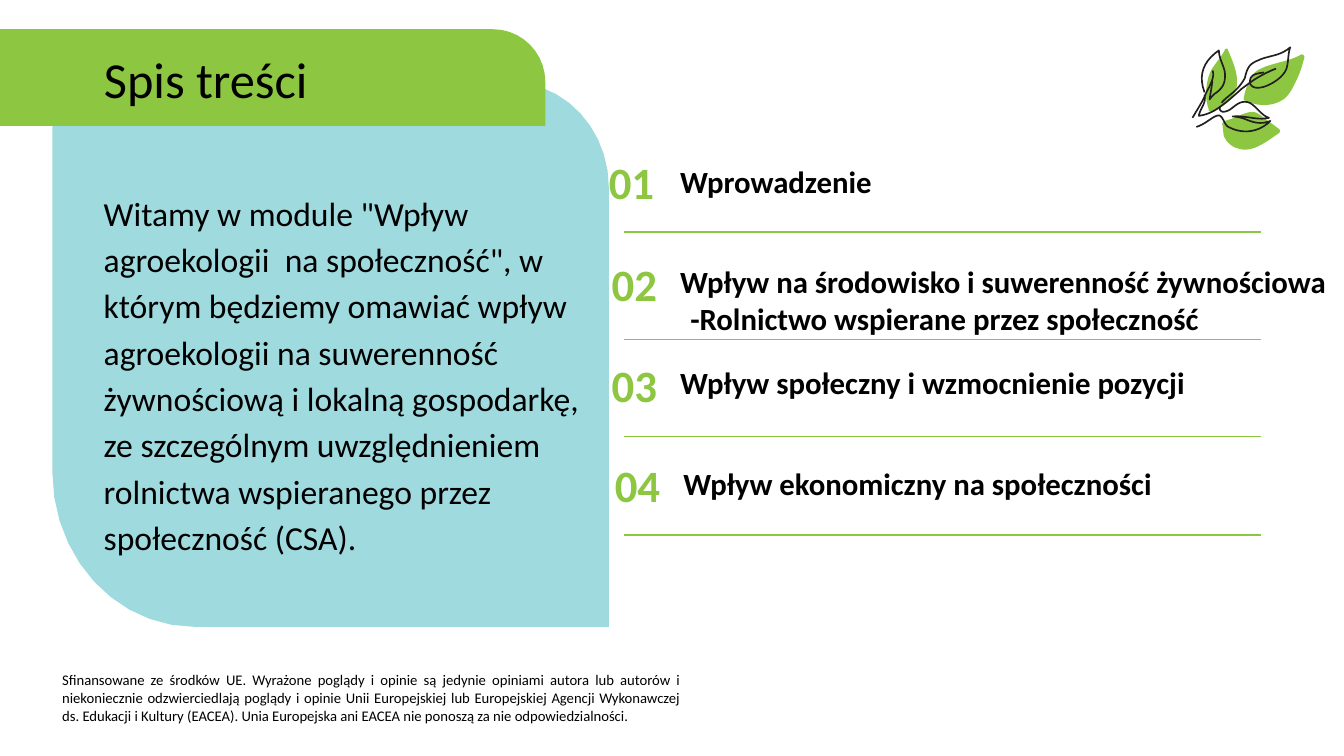
from lxml import etree
from pptx import Presentation
from pptx import util as u
from pptx.dml.color import RGBColor
from pptx.enum import shapes, text
from pptx.oxml.ns import qn

GREEN = RGBColor(0x8D, 0xC6, 0x41)
AQUA = RGBColor(0x9F, 0xDA, 0xDF)
INK = RGBColor(0x23, 0x1F, 0x20)
BLACK = RGBColor(0, 0, 0)
CURVE_STEPS = 10

PANEL = [(434.9, 447.8), (139, 447.8), (82.8, 447.8, 37.4, 398.2, 37.4, 337),
         (37.4, 59), (365.8, 59), (403.9, 59, 434.9, 92.9, 434.9, 133.9)]
BANNER = [(0, 20.9), (352.1, 20.9), (373, 20.9, 389.5, 38.2, 389.5, 58.3),
          (389.5, 90), (0, 90)]
LEAVES = [
    [(867.6, 79.2), (874.8, 75.6, 882, 69.8, 883.4, 61.9),
     (884.9, 53.3, 880.6, 43.9, 877, 35.3), (877, 34.5, 875, 34.5, 874.8, 36),
     (872.6, 40.3, 869.8, 43.2, 866.9, 47.5), (864.7, 50.4, 863.3, 54, 862.6, 57.6),
     (861.1, 64, 861.1, 71.3, 863.3, 77.8), (863, 80, 866, 80, 867.6, 79.2)],
    [(917.3, 70.6), (921.6, 67, 923.8, 61.9, 925.9, 57.6),
     (928.8, 51.8, 930.2, 46.8, 931.7, 41), (931.7, 39.6, 931, 38.9, 929.5, 38.9),
     (924.5, 41.8, 919.4, 43.2, 913.7, 44.6), (909.4, 46, 905, 46.8, 900.7, 49),
     (897.1, 50.4, 894.2, 53.3, 892.8, 56.9), (890.6, 61.2, 889.2, 65.5, 888.5, 69.8),
     (888, 71.5, 889, 72, 889.9, 72), (898.6, 76.3, 909.4, 76.3, 917.3, 70.6)],
    [(913.7, 95), (914.4, 94.3, 914.4, 92.9, 913.7, 92.2),
     (910, 89.3, 906.5, 87, 902.9, 84.2), (900, 82, 897.8, 79.9, 894.2, 79.9),
     (888, 80.5, 882, 84.5, 877, 85.7), (873, 87, 872.5, 88, 873.4, 90),
     (873.4, 92.2, 874, 95, 874, 96.5), (875.5, 100.8, 879.1, 104.4, 883.4, 105.8),
     (894.2, 110.2, 905, 100.8, 913.7, 95)],
]
STROKES = [
    [(851.8, 84.2), (856, 77, 860, 71, 861.5, 66.5),
     (865.5, 59, 867.5, 55, 866.2, 50.4)],
    [(860.4, 66), (855.5, 53, 860, 43.5, 870.6, 36), (871, 44, 875.5, 48, 875, 54.7),
     (875, 61, 871.5, 64.5, 867.6, 67), (866, 68.5, 864.8, 70, 864, 71),
     (864.8, 66, 865.5, 62, 866, 58)],
    [(860.4, 67.7), (861.5, 72, 859.5, 75, 858, 78),
     (857.5, 79.5, 856.5, 81, 856.4, 82.8), (865, 81.5, 870, 77.5, 874, 74.5),
     (878, 71.5, 883, 67, 887, 63.4), (893, 59, 899, 54, 911.5, 49)],
    [(872.6, 73.4), (877, 68, 884, 65.5, 889.2, 55.8),
     (891, 47.5, 893, 45.5, 898.6, 43.2), (906, 39.5, 914, 40.5, 921.6, 33.8),
     (919.8, 39, 920.5, 45, 918.7, 49.7), (916, 56, 906, 62, 900, 62.6),
     (896.5, 63.2, 894, 62, 893, 59.8), (892, 54, 896, 52.5, 903, 51.8)],
    [(854.6, 90.7), (862, 88.5, 867, 82, 871, 82.5),
     (874, 83.5, 874.5, 89.5, 877.7, 90.8), (888.5, 96.5, 900, 94, 907.5, 86.4),
     (901, 89, 896, 87.8, 890, 85.3), (886, 83.8, 884, 83.5, 880.5, 83.2),
     (890, 82.3, 898, 86.3, 906.5, 84.2), (900, 82.5, 896, 72.5, 889.2, 72.7),
     (882, 73, 880, 80, 873.4, 79.9), (871, 79, 871.2, 78, 871.5, 76)],
]

WELCOME = ('Witamy w module "Wpływ agroekologii  na społeczność", w którym będziemy '
           "omawiać wpływ agroekologii na suwerenność żywnościową i lokalną gospodarkę, "
           "ze szczególnym uwzględnieniem rolnictwa wspieranego przez społeczność (CSA).")
FUNDING = ("Sfinansowane ze środków UE. Wyrażone poglądy i opinie są jedynie opiniami "
           "autora lub autorów i niekoniecznie odzwierciedlają poglądy i opinie Unii "
           "Europejskiej lub Europejskiej Agencji Wykonawczej ds. Edukacji i Kultury "
           "(EACEA). Unia Europejska ani EACEA nie ponoszą za nie odpowiedzialności.")
CHAPTERS = [
    ("01", (423.4, 105.1), ["Wprowadzenie"], (478.8, 104.4), 165.6),
    ("02", (425.5, 177.8), ["Wpływ na środowisko i suwerenność żywnościowa",
                            "-Rolnictwo wspierane przez społeczność"], (478.8, 187), 242.6),
    ("03", (425.5, 249.8), ["Wpływ społeczny i wzmocnienie pozycji"], (478.8, 247.7), 311.8),
    ("04", (427.7, 321.8), ["Wpływ ekonomiczny na społeczności"], (481, 319.7), 382.3),
]


class Page:
    font = "Calibri"

    def __init__(self, deck):
        self.slide = deck.slides.add_slide(deck.slide_layouts[5])
        self.shapes = self.slide.shapes

    def outline(self, segments, fill=None, line=None, width=1.2):
        start = segments[0]
        points, (x0, y0) = [], start
        for segment in segments[1:]:
            if len(segment) == 2:
                points.append(segment)
            else:
                x1, y1, x2, y2, x3, y3 = segment
                for step in range(1, CURVE_STEPS + 1):
                    t = step / CURVE_STEPS
                    a, b, c, d = (1 - t) ** 3, 3 * t * (1 - t) ** 2, 3 * t * t * (1 - t), t ** 3
                    points.append((a * x0 + b * x1 + c * x2 + d * x3,
                                   a * y0 + b * y1 + c * y2 + d * y3))
            x0, y0 = segment[-2:]
        builder = self.shapes.build_freeform(u.Pt(start[0]), u.Pt(start[1]))
        builder.add_line_segments([(u.Pt(x), u.Pt(y)) for x, y in points], close=line is None)
        shape = builder.convert_to_shape()
        shape.shadow.inherit = False
        if fill is None:
            shape.fill.background()
        else:
            shape.fill.solid()
            shape.fill.fore_color.rgb = fill
        if line is None:
            shape.line.fill.background()
        else:
            shape.line.color.rgb = line
            shape.line.width = u.Pt(width)

    def rule(self, left, right, top):
        line = self.shapes.add_connector(shapes.MSO_CONNECTOR.STRAIGHT, u.Pt(left),
                                         u.Pt(top), u.Pt(right), u.Pt(top))
        line.line.color.rgb = GREEN
        line.line.width = u.Pt(1)
        etree.SubElement(line._element.spPr, qn("a:effectLst"))

    def set_text(self, box, area, lines, size, color=BLACK, bold=False, spacing=1.0,
                 align=text.PP_ALIGN.LEFT, anchor=text.MSO_ANCHOR.MIDDLE):
        box.left, box.top, box.width, box.height = map(u.Pt, area)
        frame = box.text_frame
        frame.word_wrap = True
        frame.auto_size = text.MSO_AUTO_SIZE.NONE
        frame.vertical_anchor = anchor
        frame.text = "\n".join(lines)
        for index, para in enumerate(frame.paragraphs):
            para.alignment = align
            para.line_spacing = spacing
            if index:
                para._p.get_or_add_pPr().set("marL", str(u.Pt(7.2)))
            para.font.name = self.font
            para.font.size = u.Pt(size)
            para.font.bold = bold
            para.font.color.rgb = color

    def textbox(self, area, lines, size, **style):
        self.set_text(self.shapes.add_textbox(0, 0, 0, 0), area, lines, size, **style)

    def title(self, area, words, size):
        box = self.shapes.title
        self.set_text(box, area, [words], size, spacing=0.9)
        self.shapes._spTree.append(box._element)


def main():
    deck = Presentation()
    deck.slide_width, deck.slide_height = u.Pt(960), u.Pt(540)
    page = Page(deck)
    page.outline(PANEL, fill=AQUA)
    page.outline(BANNER, fill=GREEN)
    page.title((67, 30.2, 396.7, 56.9), "Spis treści", 36)
    page.textbox((67, 129.6, 362.9, 280.8), [WELCOME], 24, spacing=1.15,
                 anchor=text.MSO_ANCHOR.TOP)
    for number, number_at, lines, heading_at, rule_top in CHAPTERS:
        page.rule(445.7, 900.7, rule_top)
        page.textbox((*number_at, 55.4, 54), [number], 32, color=GREEN, bold=True,
                     spacing=0.9, align=text.PP_ALIGN.CENTER)
        page.textbox((*heading_at, 479, 54), lines, 22, bold=True,
                     spacing=0.9 if len(lines) == 1 else 1.0)
    page.textbox((37.4, 475.9, 455.8, 47.5), [FUNDING], 10.5,
                 align=text.PP_ALIGN.JUSTIFY, anchor=text.MSO_ANCHOR.TOP)
    for leaf in LEAVES:
        page.outline(leaf, fill=GREEN)
    for stroke in STROKES:
        page.outline(stroke, line=INK)
    deck.save("out.pptx")


if __name__ == "__main__":
    main()
